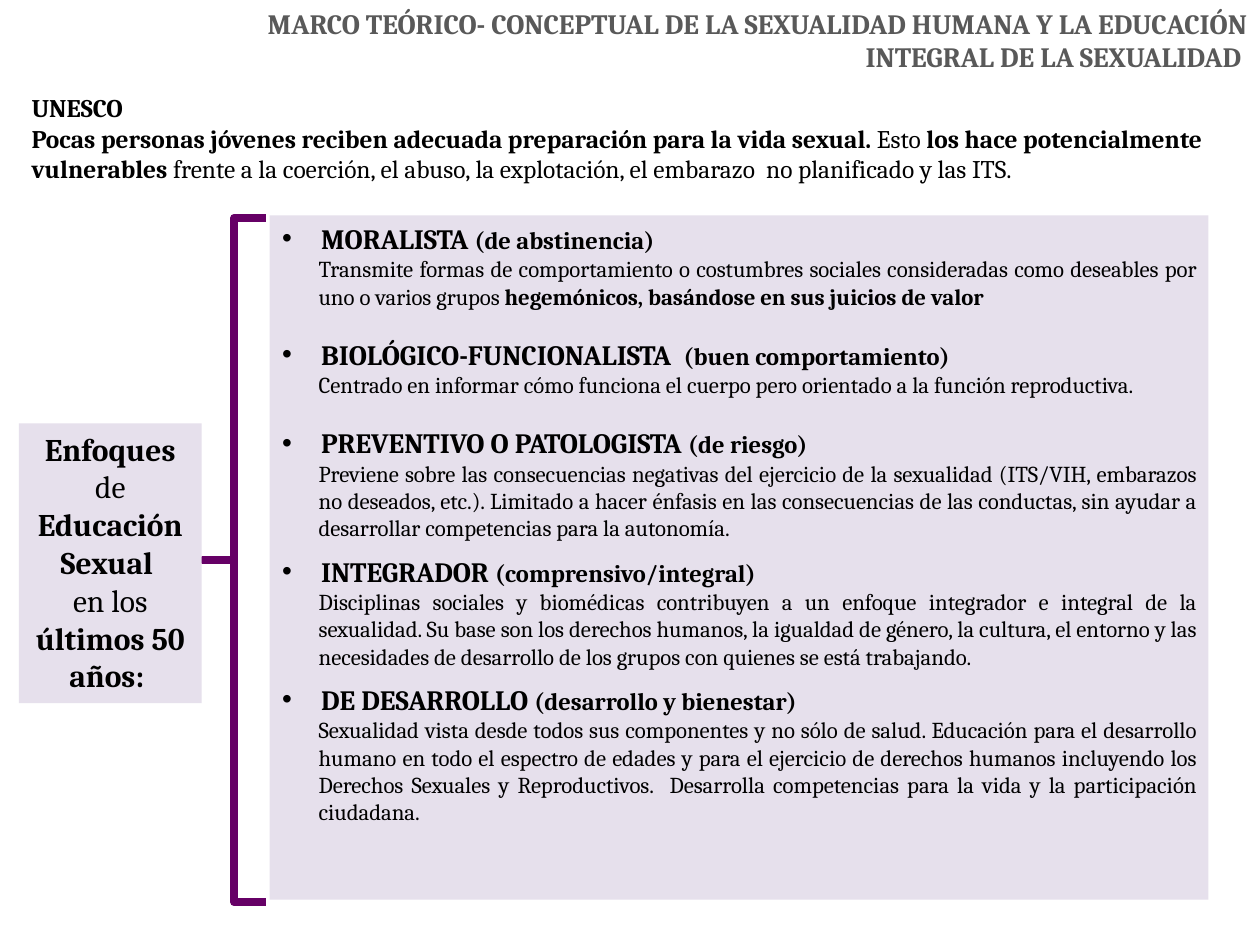
from lxml import etree
from pptx import Presentation
from pptx.dml.color import RGBColor
from pptx.enum.shapes import MSO_SHAPE
from pptx.enum.text import MSO_ANCHOR, MSO_AUTO_SIZE, PP_ALIGN
from pptx.oxml.ns import qn
from pptx.util import Inches, Pt

LEFT, CENTER, RIGHT, JUSTIFY = PP_ALIGN.LEFT, PP_ALIGN.CENTER, PP_ALIGN.RIGHT, PP_ALIGN.JUSTIFY
TOP, MIDDLE = MSO_ANCHOR.TOP, MSO_ANCHOR.MIDDLE
RECTANGLE, BRACE = MSO_SHAPE.RECTANGLE, MSO_SHAPE.LEFT_BRACE

FONT = "Cambria"
COLORS = {"text": "000000", "heading": "595959", "panel": "E6E0EC", "brace": "660066"}

HEADING = "MARCO TEÓRICO- CONCEPTUAL DE LA SEXUALIDAD HUMANA Y LA EDUCACIÓN INTEGRAL DE LA SEXUALIDAD "
INTRO = [
    ("Pocas personas jóvenes reciben adecuada preparación para la vida sexual. ", True),
    ("Esto ", False),
    ("los hace potencialmente vulnerables ", True),
    ("frente a la coerción, el abuso, la explotación, el embarazo  no planificado y las ITS.", False),
]
TOPIC = [
    [("Enfoques ", True), ("de ", False), ("Educación Sexual ", True)],
    [("en los ", False), ("últimos 50 años: ", True)],
]
# Name, remark, description runs, space above and exact line height in points
APPROACHES = [
    ("MORALISTA ", "(de abstinencia)",
     [("Transmite formas de comportamiento o costumbres sociales consideradas como deseables "
       "por uno o varios grupos ", False),
      ("hegemónicos, basándose en sus juicios de valor", True)], 0, None),
    ("BIOLÓGICO-FUNCIONALISTA  ", "(buen comportamiento)",
     [("Centrado en informar cómo funciona el cuerpo pero orientado a la función "
       "reproductiva. ", False)], 15.7, None),
    ("PREVENTIVO O PATOLOGISTA ", "(de riesgo)",
     [("Previene sobre las consecuencias negativas del ejercicio de la sexualidad (ITS/VIH, "
       "embarazos no deseados, etc.). Limitado a hacer énfasis en las consecuencias de las "
       "conductas, sin ayudar a desarrollar competencias para la autonomía.", False)], 15.7, None),
    ("INTEGRADOR ", "(comprensivo/integral)",
     [("Disciplinas sociales y biomédicas contribuyen a un enfoque integrador e integral de la "
       "sexualidad. Su base son los derechos humanos, la igualdad de género, la cultura, el "
       "entorno y las necesidades de desarrollo de los grupos con quienes se está trabajando.",
       False)], 9.7, 16.8),
    ("DE DESARROLLO ", "(desarrollo y bienestar)",
     [("Sexualidad vista desde todos sus componentes y no sólo de salud. Educación para el "
       "desarrollo humano en todo el espectro de edades y para el ejercicio de derechos humanos "
       "incluyendo los Derechos Sexuales y Reproductivos.  Desarrolla competencias para la vida "
       "y la participación ciudadana.", False)], 9.7, 16.8),
]


def add_span(para, text, size, bold=True, color="text"):
    span = para.add_run()
    span.text = text
    span.font.name = FONT
    span.font.size = Pt(size)
    span.font.bold = bold
    span.font.color.rgb = RGBColor.from_string(COLORS[color])


def set_indent(para, left, first=0, bullet=None):
    """Indent a paragraph, in inches, and give it an optional bullet."""
    properties = para._p.get_or_add_pPr()
    properties.set("marL", str(Inches(left)))
    properties.set("indent", str(Inches(first)))
    if bullet:
        font = etree.SubElement(properties, qn("a:buFont"))
        font.set("typeface", "Arial")
        etree.SubElement(properties, qn("a:buChar")).set("char", bullet)


def prepare_frame(shape, anchor=TOP):
    frame = shape.text_frame
    frame.word_wrap = True
    frame.auto_size = MSO_AUTO_SIZE.NONE
    frame.vertical_anchor = anchor
    return frame


def next_para(frame, align=LEFT):
    """Return the empty first paragraph, or a new one."""
    first = frame.paragraphs[0]
    para = frame.add_paragraph() if first.runs else first
    para.alignment = align
    return para


def add_panel(page, left, top, width, height):
    panel = page.shapes.add_shape(RECTANGLE, left, top, width, height)
    panel.shadow.inherit = False
    panel.fill.solid()
    panel.fill.fore_color.rgb = RGBColor.from_string(COLORS["panel"])
    panel.line.fill.background()
    return panel


def add_heading(page, left, top, width, height):
    box = page.shapes.add_textbox(left, top, width, height)
    add_span(next_para(prepare_frame(box), RIGHT), HEADING, 16, color="heading")


def place_intro(page, left, top, width, height):
    title = page.shapes.title
    title.left, title.top, title.width, title.height = left, top, width, height
    para = next_para(prepare_frame(title, MIDDLE))
    add_span(para, "UNESCO ", 14.5)
    para.add_line_break()
    for text, bold in INTRO:
        add_span(para, text, 14.5, bold)


def add_approaches(page, left, top, width, height):
    frame = prepare_frame(add_panel(page, left, top, width, height))
    for name, remark, description, gap, line_height in APPROACHES:
        para = next_para(frame)
        set_indent(para, 0.31, -0.31, "•")
        if gap:
            para.space_before = Pt(gap)
        if line_height:
            para.line_spacing = Pt(line_height)
        add_span(para, name, 16)
        add_span(para, remark, 14)
        para = next_para(frame, JUSTIFY)
        set_indent(para, 0.29)
        for text, bold in description:
            add_span(para, text, 13, bold)


def add_brace(page, left, top, width, height):
    brace = page.shapes.add_shape(BRACE, left, top, width, height)
    brace.adjustments[0] = 0
    brace.adjustments[1] = 0.5
    brace.shadow.inherit = False
    brace.fill.background()
    brace.line.color.rgb = RGBColor.from_string(COLORS["brace"])
    brace.line.width = Pt(4.5)


def add_topic(page, left, top, width, height):
    frame = prepare_frame(add_panel(page, left, top, width, height))
    for spans in TOPIC:
        para = next_para(frame, CENTER)
        for text, bold in spans:
            add_span(para, text, 18, bold)


def main():
    deck = Presentation()
    deck.slide_width, deck.slide_height = Inches(10), Inches(7.5)
    page = deck.slides.add_slide(deck.slide_layouts[5])
    place_intro(page, Inches(0.15), Inches(0.69), Inches(9.76), Inches(0.81))
    add_approaches(page, Inches(2.14), Inches(1.71), Inches(7.45), Inches(5.43))
    add_brace(page, Inches(1.61), Inches(1.73), Inches(0.5), Inches(5.43))
    add_topic(page, Inches(0.15), Inches(3.36), Inches(1.45), Inches(2.22))
    add_heading(page, Inches(1.93), Inches(0), Inches(8.07), Inches(0.64))
    deck.save("out.pptx")


if __name__ == "__main__":
    main()
